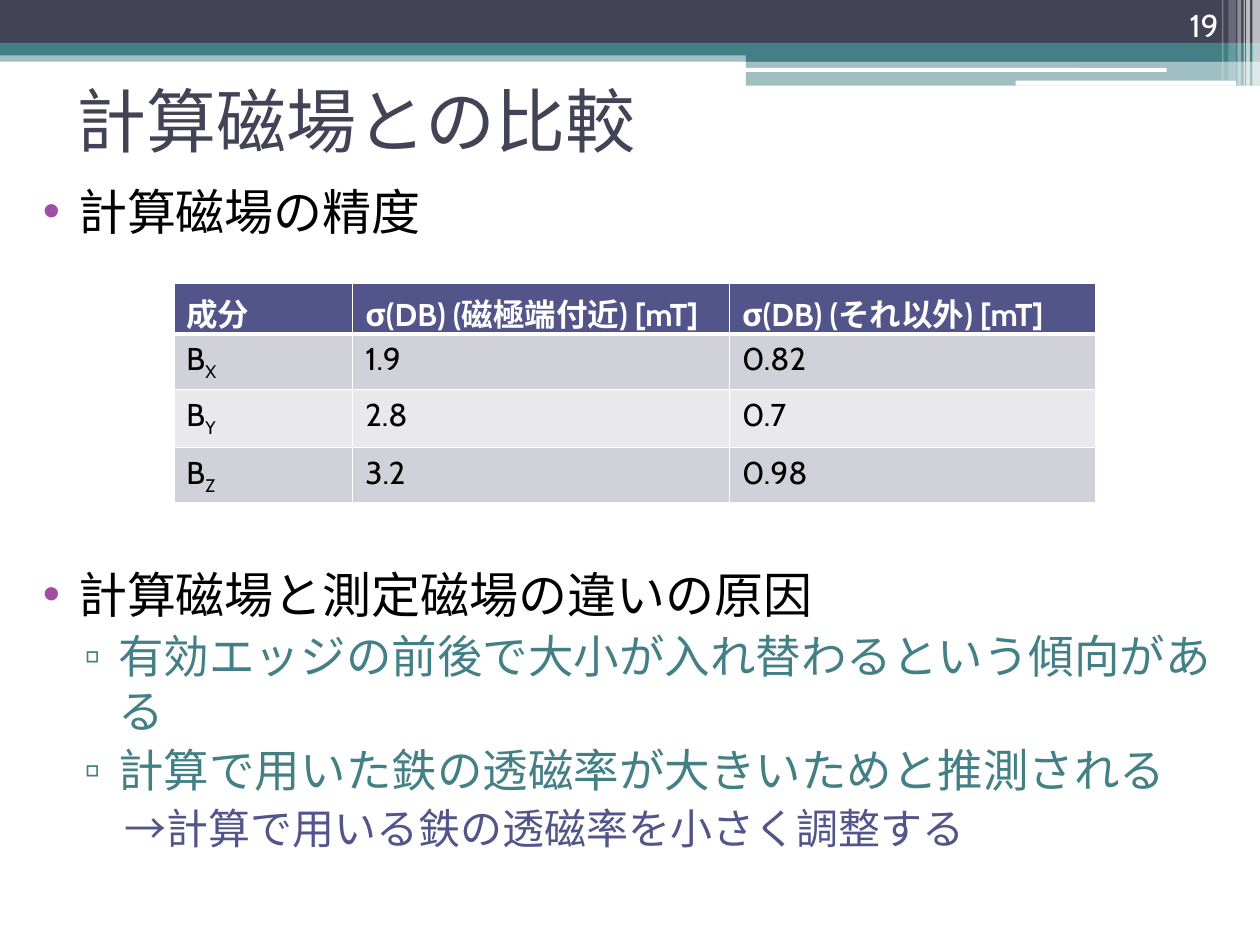
from collections import namedtuple

from lxml.etree import SubElement
from pptx import Presentation
from pptx.dml.color import RGBColor
from pptx.enum.shapes import MSO_SHAPE as Shape
from pptx.enum.text import MSO_ANCHOR as Anchor, MSO_AUTO_SIZE as AutoSize, PP_ALIGN as Align
from pptx.oxml.ns import qn
from pptx.util import Inches, Pt

Box = namedtuple("Box", "left top width height")

FONT = "Cabin"
WHITE = RGBColor(0xFF, 0xFF, 0xFF)
BLACK = RGBColor(0x00, 0x00, 0x00)
SLATE = RGBColor(0x42, 0x44, 0x56)
TEAL = RGBColor(0x43, 0x80, 0x86)
INDIGO = RGBColor(0x53, 0x54, 0x8A)
PURPLE = RGBColor(0xA0, 0x4D, 0xA3)
BANDS = (RGBColor(0xD1, 0xD1, 0xDA), RGBColor(0xE9, 0xE9, 0xED))

WIDTH, HEIGHT = 10, 7.5
HEADER = Box(0, 0, WIDTH, 0.68)
TITLE = Box(0.51, 0.36, 9, 1.17)
BODY = Box(0.12, 1.39, 9.69, 5.98)
NUMBER = Box(8.94, 0, 0.83, 0.4)
TABLE = Box(1.38, 2.25, 7.32, 1.66)


def inches(box):
    return [Inches(length) for length in box]


def move(shape, box):
    shape.left, shape.top, shape.width, shape.height = inches(box)


def add_text(para, text, size=18, color=BLACK, bold=False, baseline=None):
    """Append one formatted span to a paragraph."""
    span = para.add_run()
    span.text = text
    font = span.font
    font.name, font.size, font.bold = FONT, Pt(size), bold
    font.color.rgb = color
    if baseline:
        font._element.set("baseline", str(baseline * 1000))


def add_bar(page, box, color, opacity=100, kind=Shape.RECTANGLE):
    bar = page.shapes.add_shape(kind, *inches(box))
    bar.shadow.inherit = False
    bar.fill.solid()
    bar.fill.fore_color.rgb = color
    bar.line.fill.background()
    if opacity < 100:
        fill = bar.fill._xPr.find(qn("a:solidFill"))
        SubElement(fill[0], qn("a:alpha"), val=str(opacity * 1000))
    return bar


def add_header(page, box):
    """Coloured bands, two white slots and fading stripes at the right end."""
    right = box.left + box.width
    bands = [(0.4, 0.09, TEAL, 50), (0, 0.34, SLATE, 100), (0.34, 0.1, TEAL, 100)]
    for top, height, color, opacity in bands:
        add_bar(page, Box(box.left, box.top + top, box.width, height), color, opacity)

    # Tab hanging below the bands
    for top, height, opacity in [(0.39, 0.1, 100), (0.48, 0.2, 50)]:
        add_bar(page, Box(right - 4.08, box.top + top, 4.08, height), TEAL, opacity)
    for offset, top, width, height in [(4.09, 0.54, 3.35, 0.03), (1.94, 0.64, 1.75, 0.04)]:
        add_bar(page, Box(right - offset, box.top + top, width, height), WHITE,
                kind=Shape.ROUNDED_RECTANGLE)

    # Stripes: distance from the right edge, width, height, opacity
    stripes = [(0.06, 0.06, 0.68, 65), (0.11, 0.03, 0.68, 65), (0.13, 0.01, 0.68, 60),
               (0.18, 0.03, 0.68, 40), (0.25, 0.06, 0.64, 20), (0.3, 0.01, 0.64, 30)]
    for offset, width, height, opacity in stripes:
        add_bar(page, Box(right - offset, box.top, width, height), WHITE, opacity)


def add_title(page, box, text):
    title = page.shapes.title
    move(title, box)
    frame = title.text_frame
    frame.auto_size = AutoSize.NONE
    frame.vertical_anchor = Anchor.MIDDLE
    frame.paragraphs[0].alignment = Align.LEFT
    add_text(frame.paragraphs[0], text, size=40, color=SLATE)


def add_number(page, box, text):
    frame = page.shapes.add_textbox(*inches(box)).text_frame
    frame.word_wrap = True
    frame.vertical_anchor = Anchor.BOTTOM
    frame.paragraphs[0].alignment = Align.RIGHT
    add_text(frame.paragraphs[0], text, color=WHITE)


def set_bullet(para, margin, indent, mark, color):
    props = para._p.get_or_add_pPr()
    props.set("marL", str(Inches(margin)))
    props.set("indent", str(Inches(indent)))
    if mark:
        tint = SubElement(props, qn("a:buClr"))
        SubElement(tint, qn("a:srgbClr"), val=str(color))
        SubElement(props, qn("a:buChar"), char=mark)
    else:
        SubElement(props, qn("a:buNone"))


def add_body(page, box, items):
    # Per level: text size, text colour, margin, indent, bullet, bullet colour
    levels = [(28, BLACK, 0.4, -0.28, "•", PURPLE),
              (26, TEAL, 0.72, -0.27, "▫", TEAL),
              (24, INDIGO, 0.77, 0, None, None)]
    body = page.placeholders[1]
    move(body, box)
    frame = body.text_frame
    frame.auto_size = AutoSize.NONE
    for index, (level, text, before) in enumerate(items):
        para = frame.paragraphs[0] if index == 0 else frame.add_paragraph()
        size, color, *bullet = levels[level]
        para.level = level
        para.space_before = Pt(before)
        set_bullet(para, *bullet)
        add_text(para, text, size=size, color=color)


def set_borders(cell, bottom):
    props = cell._tc.get_or_add_tcPr()
    sides = [("a:lnL", 1), ("a:lnR", 1), ("a:lnT", 1), ("a:lnB", bottom)]
    for index, (side, width) in enumerate(sides):
        line = props.makeelement(qn(side), {"w": str(Pt(width))})
        fill = SubElement(line, qn("a:solidFill"))
        SubElement(fill, qn("a:srgbClr"), val=str(WHITE))
        props.insert(index, line)


def add_results(page, box, header, rows):
    frame = page.shapes.add_table(len(rows) + 1, len(header), *inches(box))
    table = frame.table
    for column, width in zip(table.columns, (1.42, 2.99, 2.91)):
        column.width = Inches(width)
    for row, height in zip(table.rows, (0.38, 0.38, 0.46, 0.39)):
        row.height = Inches(height)
    for r, texts in enumerate([header, *rows]):
        for c, text in enumerate(texts):
            cell = table.cell(r, c)
            cell.fill.solid()
            cell.fill.fore_color.rgb = BANDS[(r - 1) % 2] if r else INDIGO
            set_borders(cell, bottom=1 if r else 3)
            para = cell.text_frame.paragraphs[0]
            if r == 0:
                add_text(para, text, color=WHITE, bold=True)
            elif c == 0:
                add_text(para, "B")
                add_text(para, text, baseline=-25)
            else:
                add_text(para, text)
    frame.height = Inches(box.height)


def main():
    deck = Presentation()
    deck.slide_width, deck.slide_height = Inches(WIDTH), Inches(HEIGHT)
    page = deck.slides.add_slide(deck.slide_layouts[1])

    add_header(page, HEADER)
    add_title(page, TITLE, "計算磁場との比較")
    # The second heading starts below the table
    add_body(page, BODY, [
        (0, "計算磁場の精度", 3),
        (0, "計算磁場と測定磁場の違いの原因", 185),
        (1, "有効エッジの前後で大小が入れ替わるという傾向がある", 3),
        (1, "計算で用いた鉄の透磁率が大きいためと推測される", 3),
        (2, "→計算で用いる鉄の透磁率を小さく調整する", 3),
    ])
    add_number(page, NUMBER, "19")
    add_results(page, TABLE,
                ["成分", "σ(DB) (磁極端付近) [mT]", "σ(DB) (それ以外) [mT]"],
                [["X", "1.9", "0.82"], ["Y", "2.8", "0.7"], ["Z", "3.2", "0.98"]])
    deck.save("out.pptx")


if __name__ == "__main__":
    main()
